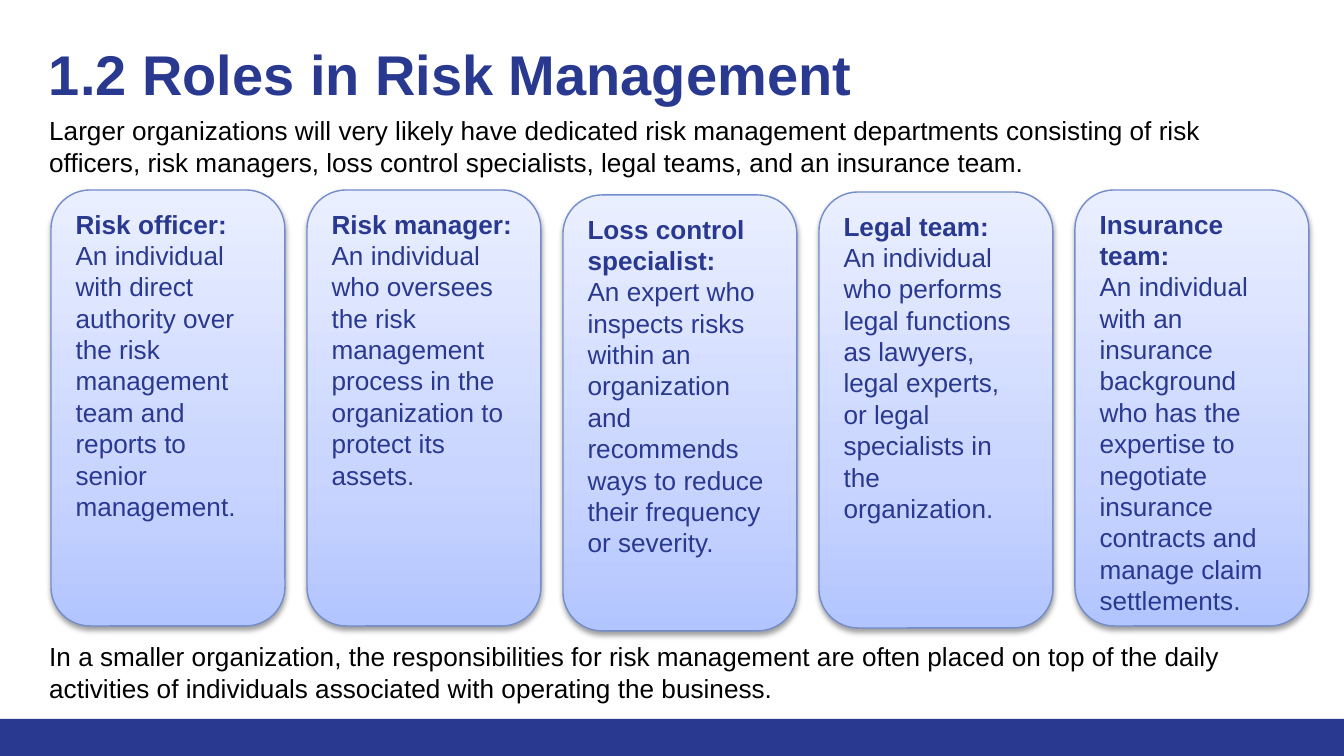
from copy import deepcopy

from lxml import etree
from pptx import Presentation
from pptx.dml.color import RGBColor
from pptx.enum.shapes import MSO_SHAPE
from pptx.enum.text import MSO_ANCHOR, MSO_AUTO_SIZE, PP_ALIGN
from pptx.oxml.ns import qn
from pptx.util import Emu, Pt

RECT, ROUND = MSO_SHAPE.RECTANGLE, MSO_SHAPE.ROUNDED_RECTANGLE
TOP, LEFT = MSO_ANCHOR.TOP, PP_ALIGN.LEFT
FIXED = MSO_AUTO_SIZE.NONE
NAVY, BLACK, EDGE = "2A3990", "000000", "738CCB"
STOPS = [(0, "B3C5FF"), (0.35, "C9D5FF"), (1, "EAEFFF")]
WIDE, HIGH = 1344, 756
SCALE = 10 * 914400 / WIDE

INTRO = ("Larger organizations will very likely have dedicated risk management "
         "departments consisting of risk officers, risk managers, loss control "
         "specialists, legal teams, and an insurance team.")
CLOSE = ("In a smaller organization, the responsibilities for risk management "
         "are often placed on top of the daily activities of individuals "
         "associated with operating the business.")
ROLES = [
    (190, "Risk officer:", "An individual with direct authority over the risk "
     "management team and reports to senior management."),
    (190, "Risk manager:", "An individual who oversees the risk management "
     "process in the organization to protect its assets."),
    (195, "Loss control specialist:", "An expert who inspects risks within an "
     "organization and recommends ways to reduce their frequency or severity."),
    (192, "Legal team:", "An individual who performs legal functions as "
     "lawyers, legal experts, or legal specialists in the organization."),
    (190, "Insurance team:", "An individual with an insurance background who "
     "has the expertise to negotiate insurance contracts and manage claim "
     "settlements."),
]


def px(n):
    return Emu(round(n * SCALE))


def color(code):
    return RGBColor.from_string(code)


def write(frame, lines, size, code):
    frame.word_wrap = True
    frame.auto_size = FIXED
    frame.vertical_anchor = TOP
    for i, (text, bold) in enumerate(lines):
        para = frame.add_paragraph() if i else frame.paragraphs[0]
        para.alignment = LEFT
        run = para.add_run()
        run.text = text
        font = run.font
        font.name, font.size, font.bold = "Arial", Pt(size), bold
        font.color.rgb = color(code)


def add_title(slide, text):
    title = slide.shapes.title
    title.left, title.top = px(36), px(27)
    title.width, title.height = px(1237), px(120)
    frame = title.text_frame
    frame.margin_left = frame.margin_right = px(13)
    frame.margin_top = frame.margin_bottom = px(13)
    write(frame, [(text, True)], 30, NAVY)


def add_bar(slide):
    bar = slide.shapes.add_shape(RECT, 0, px(719), px(WIDE), px(HIGH - 719))
    bar.shadow.inherit = False
    bar.fill.solid()
    bar.fill.fore_color.rgb = color(NAVY)
    bar.line.fill.background()


def add_note(slide, top, text):
    box = slide.shapes.add_textbox(px(36), px(top), px(1272), px(77))
    write(box.text_frame, [(text, False)], 14, BLACK)


def shade(shape):
    fill = shape.fill
    fill.gradient()
    fill.gradient_angle = 90
    last = shape._element.spPr.findall(".//" + qn("a:gs"))[-1]
    last.addnext(deepcopy(last))
    for stop, (place, code) in zip(fill.gradient_stops, STOPS):
        stop.position = place
        stop.color.rgb = color(code)


def cast(shape):
    shape.shadow.inherit = False
    effects = shape._element.spPr.find(qn("a:effectLst"))
    outer = etree.SubElement(effects, qn("a:outerShdw"), blurRad="40000",
                             dist="20000", dir="5400000", rotWithShape="0")
    tint = etree.SubElement(outer, qn("a:srgbClr"), val=BLACK)
    etree.SubElement(tint, qn("a:alpha"), val="38000")


def add_card(slide, left, top, head, body):
    card = slide.shapes.add_shape(ROUND, px(left), px(top), px(234), px(436))
    shade(card)
    card.line.color.rgb = color(EDGE)
    card.line.width = Pt(0.75)
    cast(card)
    write(card.text_frame, [(head, True), (body, False)], 14, NAVY)


def main():
    deck = Presentation()
    deck.slide_width, deck.slide_height = px(WIDE), px(HIGH)
    slide = deck.slides.add_slide(deck.slide_layouts[5])
    add_bar(slide)
    add_title(slide, "1.2 Roles in Risk Management")
    add_note(slide, 108, INTRO)
    for i, (top, head, body) in enumerate(ROLES):
        add_card(slide, 51 + 256 * i, top, head, body)
    add_note(slide, 634, CLOSE)
    deck.save("out.pptx")


if __name__ == "__main__":
    main()
